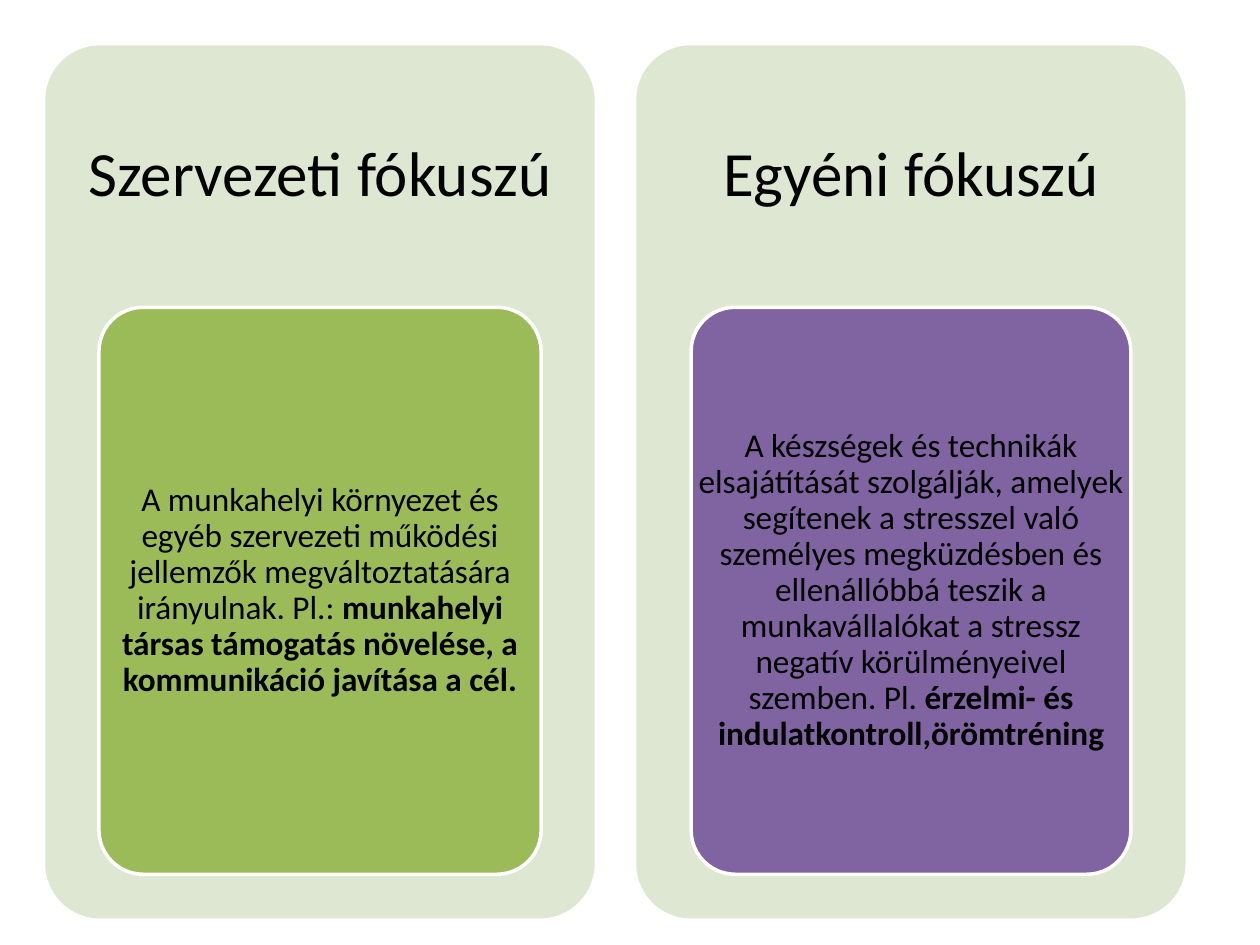
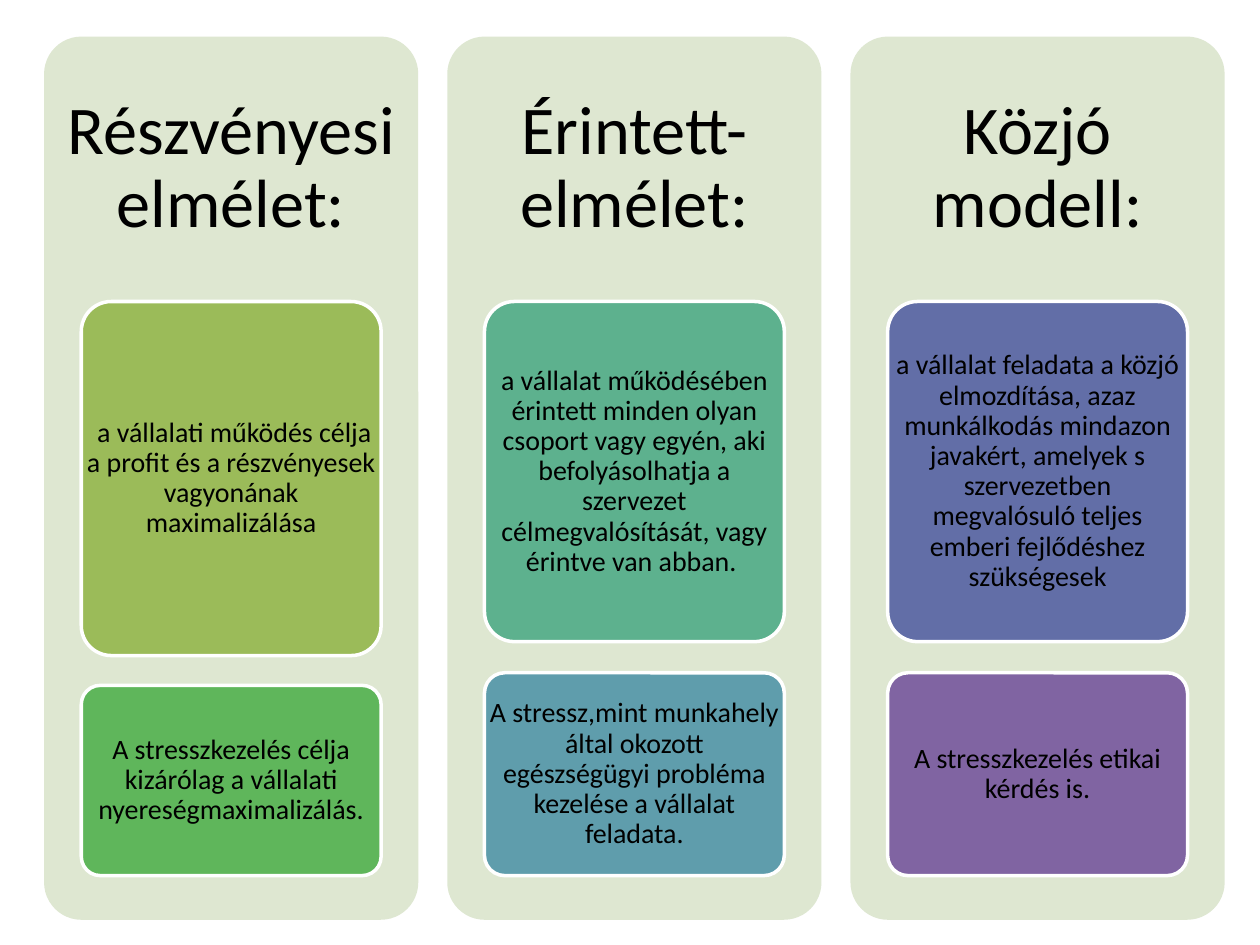
from dataclasses import dataclass

from pptx import Presentation
from pptx import util as u
from pptx.dml.color import RGBColor
from pptx.enum import shapes, text

# Content: each column has a heading and cards of (fill, height, text runs);
# a run is (wording, bold)
SLIDES = [
    {
        "left": 0.36, "top": 0.36, "width": 4.36, "height": 6.93, "pitch": 4.69,
        "heading_size": 36, "heading_inset": 0.15,
        "card_size": 19, "card_insets": (0.05, 0.04),
        "columns": [
            ("Szervezeti fókuszú", 3.51, [
                ("9BBB59", 4.5, [
                    ("A munkahelyi környezet és egyéb szervezeti működési jellemzők "
                     "megváltoztatására irányulnak. Pl.: ", False),
                    ("munkahelyi társas támogatás növelése, a kommunikáció "
                     "javítása a cél.", True)]),
            ]),
            ("Egyéni fókuszú", 3.49, [
                ("8064A2", 4.5, [
                    ("A készségek és technikák elsajátítását szolgálják, amelyek "
                     "segítenek a stresszel való személyes megküzdésben és "
                     "ellenállóbbá teszik a munkavállalókat a stressz negatív "
                     "körülményeivel szemben. Pl. ", False),
                    ("érzelmi- és indulatkontroll,örömtréning", True)]),
            ]),
        ],
    },
    {
        "left": 0.35, "top": 0.29, "width": 2.97, "height": 7.01, "pitch": 3.2,
        "heading_size": 39, "heading_inset": 0.16,
        "card_size": 16, "card_insets": (0.04, 0.03),
        "columns": [
            ("Részvényesi elmélet:", 2.38, [
                ("9BBB59", 2.81, [
                    (" a vállalati működés célja a profit és a részvényesek "
                     "vagyonának maximalizálása", False)]),
                ("5FB65B", 1.51, [
                    ("A stresszkezelés célja kizárólag a vállalati "
                     "nyereségmaximalizálás.", False)]),
            ]),
            ("Érintett-elmélet:", 2.38, [
                ("5DB18E", 2.7, [
                    ("a vállalat működésében érintett minden olyan csoport vagy "
                     "egyén, aki befolyásolhatja a szervezet célmegvalósítását, "
                     "vagy érintve van abban. ", False)]),
                ("5F9DAC", 1.61, [
                    ("A stressz,mint munkahely által okozott egészségügyi probléma "
                     "kezelése a vállalat feladata.", False)]),
            ]),
            ("Közjó modell:", 2.38, [
                ("626EA7", 2.7, [
                    ("a vállalat feladata a közjó elmozdítása, azaz munkálkodás "
                     "mindazon javakért, amelyek s szervezetben megvalósuló teljes "
                     "emberi fejlődéshez szükségesek", False)]),
                ("8064A2", 1.61, [
                    ("A stresszkezelés etikai kérdés is.", False)]),
            ]),
        ],
    },
]


@dataclass(frozen=True)
class Theme:
    font: str = "Calibri"
    ink: str = "000000"
    panel: str = "DEE7D1"
    outline: str = "FFFFFF"
    outline_width: float = 2
    corner: float = 0.1
    line_spacing: float = 0.9
    heading_share: float = 0.3   # of the panel height
    cards_share: float = 0.65


THEME = Theme()


def set_values(target, values):
    for name, value in values.items():
        setattr(target, name, value)


def add_panel(slide, box, fill, outlined=False):
    shape = slide.shapes.add_shape(
        shapes.MSO_SHAPE.ROUNDED_RECTANGLE, *map(u.Inches, box))
    shape.adjustments[0] = THEME.corner
    shape.shadow.inherit = False
    shape.fill.solid()
    shape.fill.fore_color.rgb = RGBColor.from_string(fill)
    if outlined:
        shape.line.color.rgb = RGBColor.from_string(THEME.outline)
        shape.line.width = u.Pt(THEME.outline_width)
    else:
        shape.line.fill.background()


def add_text(slide, box, runs, size, inset_x, inset_y):
    frame = slide.shapes.add_textbox(*map(u.Inches, box)).text_frame
    set_values(frame, {
        "word_wrap": True, "vertical_anchor": text.MSO_ANCHOR.MIDDLE,
        "margin_left": u.Inches(inset_x), "margin_right": u.Inches(inset_x),
        "margin_top": u.Inches(inset_y), "margin_bottom": u.Inches(inset_y)})
    paragraph = frame.paragraphs[0]
    set_values(paragraph, {"alignment": text.PP_ALIGN.CENTER,
                           "line_spacing": THEME.line_spacing})
    for wording, bold in runs:
        run = paragraph.add_run()
        run.text = wording
        set_values(run.font, {"name": THEME.font, "size": u.Pt(size), "bold": bold})
        run.font.color.rgb = RGBColor.from_string(THEME.ink)


def add_column(slide, layout, left, heading, card_width, cards):
    top, width, height = layout["top"], layout["width"], layout["height"]

    # Panel and heading
    heading_height = THEME.heading_share * height
    inset = layout["heading_inset"]
    add_panel(slide, (left, top, width, height), THEME.panel)
    add_text(slide, (left, top, width, heading_height), [(heading, False)],
             layout["heading_size"], inset, inset)

    # Cards, centred in the panel and spread evenly over the card area
    spare = THEME.cards_share * height - sum(card[1] for card in cards)
    gap = spare / max(len(cards) - 1, 1)
    card_left = left + (width - card_width) / 2
    card_top = top + heading_height
    for fill, card_height, runs in cards:
        box = (card_left, card_top, card_width, card_height)
        add_panel(slide, box, fill, outlined=True)
        add_text(slide, box, runs, layout["card_size"], *layout["card_insets"])
        card_top += card_height + gap


def main():
    presentation = Presentation()
    set_values(presentation, {"slide_width": u.Inches(10),
                              "slide_height": u.Inches(7.5)})
    for layout in SLIDES:
        slide = presentation.slides.add_slide(presentation.slide_layouts[6])
        for index, column in enumerate(layout["columns"]):
            add_column(slide, layout, layout["left"] + index * layout["pitch"], *column)
    presentation.save("out.pptx")


if __name__ == "__main__":
    main()
